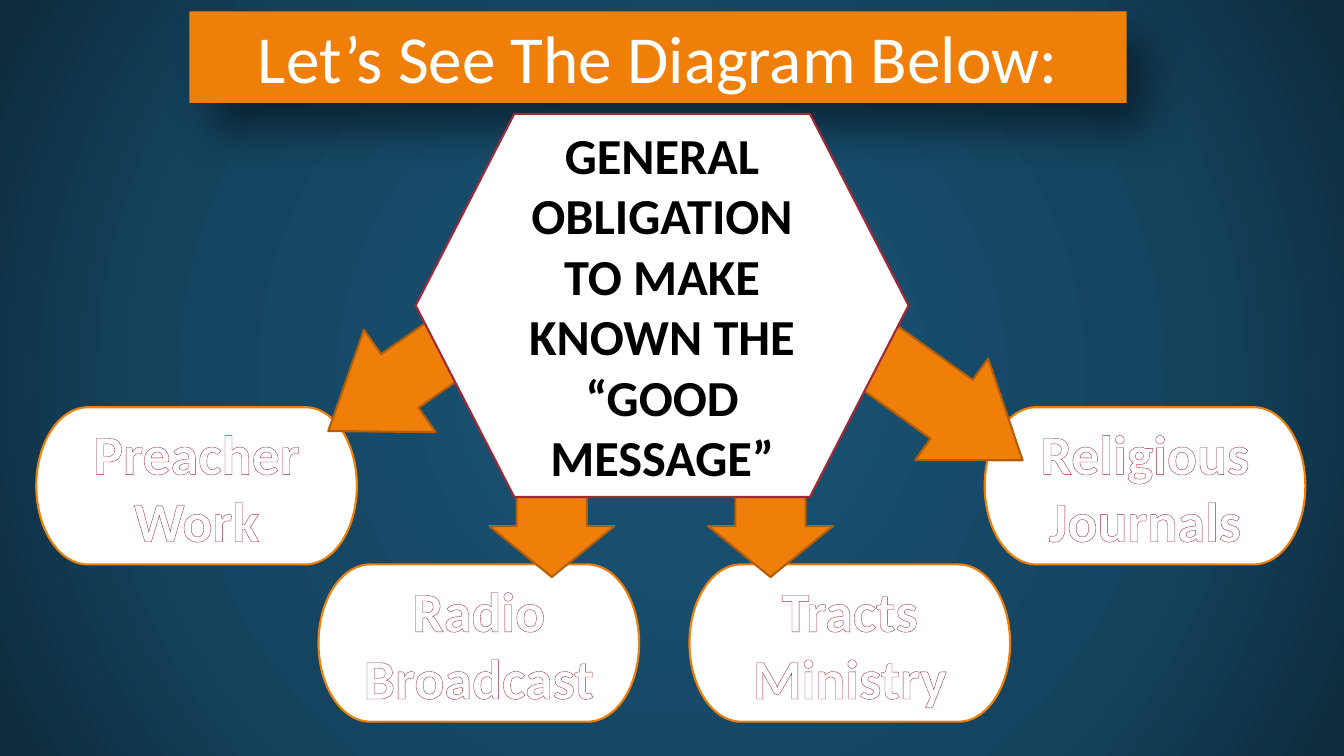
from math import atan2, degrees, hypot

from lxml.etree import SubElement
from pptx import Presentation
from pptx.dml.color import RGBColor
from pptx.enum.dml import MSO_PATTERN
from pptx.enum.shapes import MSO_SHAPE
from pptx.enum.text import MSO_ANCHOR, MSO_AUTO_SIZE, PP_ALIGN
from pptx.oxml import parse_xml
from pptx.oxml.ns import nsdecls, qn
from pptx.util import Pt

TITLE = "Let’s See The Diagram Below:"
OBLIGATION = "GENERAL OBLIGATION TO MAKE KNOWN THE “GOOD MESSAGE”"
METHODS = [
    ("Preacher Work", 25.9, 0),
    ("Radio Broadcast", 227.5, 1),
    ("Tracts Ministry", 492.5, 1),
    ("Religious Journals", 703.4, 0),
]
SIDE_ARROW = (157, 89.3)
DOWN_ARROW = (84.2, 89.3)
ARROWS = [
    (220.3, 218.2, SIDE_ARROW, 325, (0.523, 0.699)),
    (352.1, 325.4, DOWN_ARROW, 270, (0.562, 0.432)),
    (508.3, 325.4, DOWN_ARROW, 270, (0.562, 0.432)),
    (588.2, 238.3, SIDE_ARROW, 215.7, (0.578, 0.699)),
]
METHOD_SIZE = (229, 112.3)
METHOD_TOP = 290.9
SHADOW = {"blur": 30, "right": 15, "down": 18, "opacity": 45}

THEME = {
    "font": "Calibri",
    "orange": "F07F09",
    "dark_orange": "B25E07",
    "red": "9F2936",
    "white": "FFFFFF",
    "black": "000000",
    "purple": "604878",
    "lilac": "A088B7",
    "title": 48,
    "method": 40,
    "obligation": 36,
    "line": 1.5,
    "background": [(0, "184E6E"), (23, "184E6E"), (69, "14425D"), (97, "0E2C3E")],
}


def color(name):
    return RGBColor.from_string(THEME[name])


def paint_background(slide):
    stops = "".join(
        f'<a:gs pos="{position * 1000}"><a:srgbClr val="{value}"/></a:gs>'
        for position, value in THEME["background"]
    )
    background = parse_xml(
        f'<p:bg {nsdecls("p", "a")}><p:bgPr><a:gradFill rotWithShape="1">'
        f'<a:gsLst>{stops}</a:gsLst><a:path path="circle">'
        '<a:fillToRect l="50000" t="50000" r="50000" b="50000"/></a:path>'
        '</a:gradFill><a:effectLst/></p:bgPr></p:bg>'
    )
    slide.element.cSld.insert(0, background)


def add_panel(slide, kind, left, top, size, fill, line=None):
    shape = slide.shapes.add_shape(kind, Pt(left), Pt(top), *map(Pt, size))
    shape.shadow.inherit = False
    shape.fill.solid()
    shape.fill.fore_color.rgb = color(fill)
    if line:
        shape.line.color.rgb = color(line)
        shape.line.width = Pt(THEME["line"])
    else:
        shape.line.fill.background()
    return shape


def write_text(shape, text, size, fill="white", pattern_back=None, bold=False,
               outline=None, anchor=MSO_ANCHOR.MIDDLE):
    frame = shape.text_frame
    frame.word_wrap = True
    frame.vertical_anchor = anchor
    paragraph = frame.paragraphs[0]
    paragraph.alignment = PP_ALIGN.CENTER
    run = paragraph.add_run()
    run.text = text
    font = run.font
    font.name = THEME["font"]
    font.size = Pt(THEME[size])
    font.bold = bold
    if pattern_back:
        font.fill.patterned()
        font.fill.pattern = MSO_PATTERN.LIGHT_DOWNWARD_DIAGONAL
        font.fill.back_color.rgb = color(pattern_back)
    else:
        font.fill.solid()
    font.fill.fore_color.rgb = color(fill)
    if outline:
        name, width = outline
        run.font._element.insert(0, parse_xml(
            f'<a:ln {nsdecls("a")} w="{Pt(width)}"><a:solidFill>'
            f'<a:srgbClr val="{THEME[name]}"/></a:solidFill></a:ln>'
        ))


def cast_shadow(shape, blur, right, down, opacity):
    effects = shape._element.spPr.find(qn("a:effectLst"))
    shadow = SubElement(
        effects, qn("a:outerShdw"), blurRad=str(Pt(blur)),
        dist=str(Pt(hypot(right, down))),
        dir=str(round(degrees(atan2(down, right)) * 60000)),
        algn="tl", rotWithShape="0",
    )
    tint = SubElement(shadow, qn("a:srgbClr"), val=THEME["black"])
    SubElement(tint, qn("a:alpha"), val=str(opacity * 1000))


def main():
    presentation = Presentation()
    presentation.slide_width, presentation.slide_height = Pt(960), Pt(540)
    slide = presentation.slides.add_slide(presentation.slide_layouts[6])
    paint_background(slide)

    title = add_panel(slide, MSO_SHAPE.RECTANGLE, 135.2, 8.1, (669.6, 65.4), "orange")
    write_text(title, TITLE, "title", anchor=MSO_ANCHOR.TOP)
    title.text_frame.auto_size = MSO_AUTO_SIZE.SHAPE_TO_FIT_TEXT
    cast_shadow(title, **SHADOW)

    for text, left, row in METHODS:
        top = METHOD_TOP + row * METHOD_SIZE[1]
        method = add_panel(slide, MSO_SHAPE.FLOWCHART_TERMINATOR, left, top,
                           METHOD_SIZE, "white", "orange")
        write_text(method, text, "method", bold=True, outline=("red", 0.52))

    for left, top, size, rotation, adjustments in ARROWS:
        arrow = add_panel(slide, MSO_SHAPE.LEFT_ARROW, left, top, size,
                          "orange", "dark_orange")
        arrow.rotation = rotation
        for index, value in enumerate(adjustments):
            arrow.adjustments[index] = value

    hexagon = add_panel(slide, MSO_SHAPE.FLOWCHART_PREPARATION, 296.9, 81.4,
                        (352.1, 273.6), "white", "red")
    write_text(hexagon, OBLIGATION, "obligation", fill="lilac",
               pattern_back="black", bold=True, outline=("purple", 1))

    presentation.save("out.pptx")


if __name__ == "__main__":
    main()
